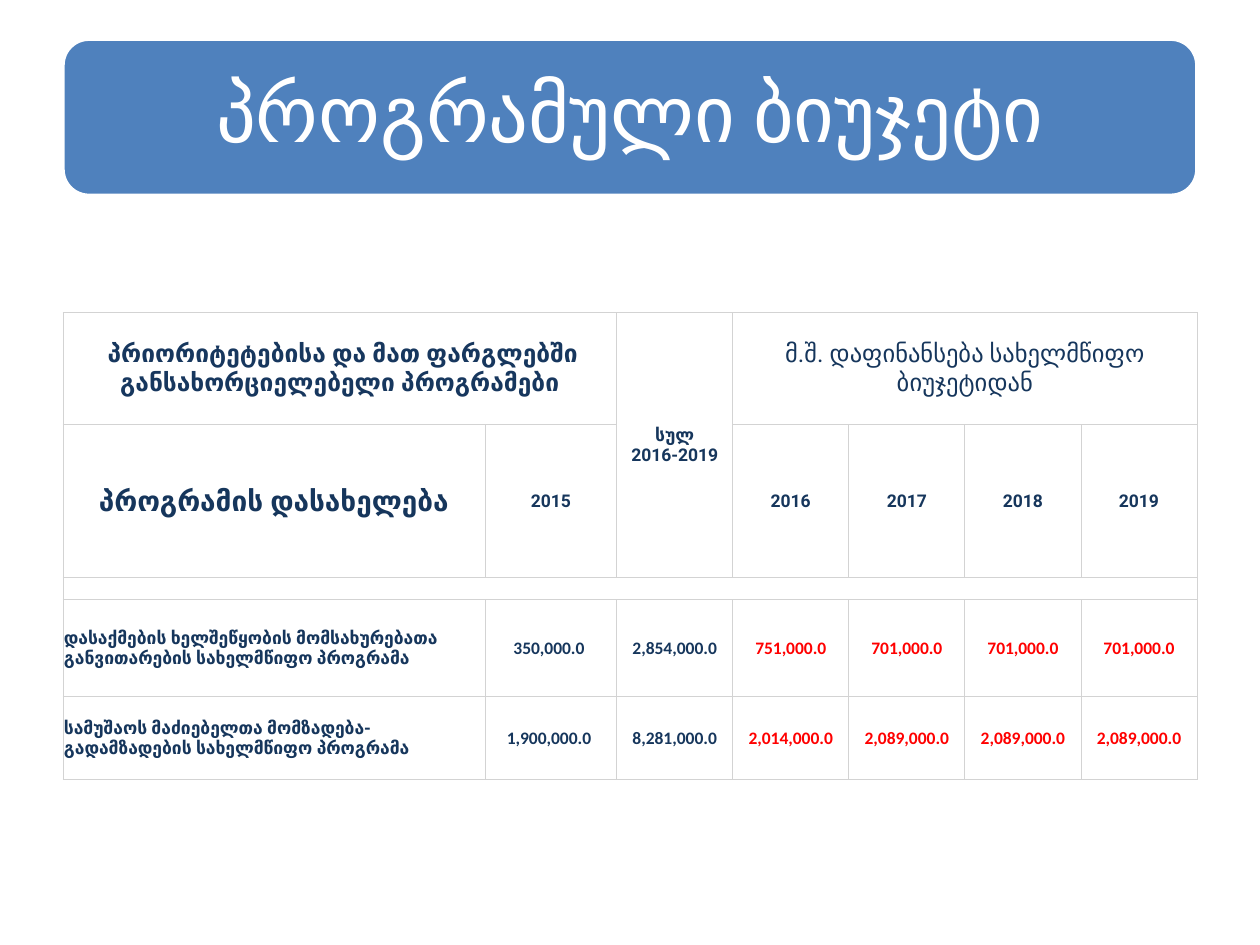
from lxml.etree import SubElement
from pptx import Presentation
from pptx.dml.color import RGBColor
from pptx.enum.shapes import MSO_SHAPE as Preset
from pptx.enum.text import MSO_ANCHOR as Anchor, MSO_AUTO_SIZE as AutoSize, PP_ALIGN as Align
from pptx.oxml.ns import qn
from pptx.util import Cm, Pt

WHITE = RGBColor(0xFF, 0xFF, 0xFF)
BLUE = RGBColor(0x4F, 0x81, 0xBD)
NAVY = RGBColor(0x17, 0x37, 0x5E)
DARK = RGBColor(0x16, 0x36, 0x5C)
RED = RGBColor(0xFF, 0x00, 0x00)
GRID = RGBColor(0xD3, 0xD3, 0xD3)

LEFT, WIDTH = 1.27, 22.86
COLUMNS = [8.51, 2.65] + [2.34] * 5
ROWS = [2.26, 3.09, 0.44, 1.95, 1.68]

PROGRAMS = [
    ("დასაქმების ხელშეწყობის მომსახურებათა განვითარების სახელმწიფო პროგრამა",
     ["350,000.0 ", "2,854,000.0", "751,000.0", "701,000.0", "701,000.0", "701,000.0"]),
    ("სამუშაოს მაძიებელთა მომზადება-გადამზადების სახელმწიფო პროგრამა",
     ["1,900,000.0 ", "8,281,000.0", "2,014,000.0", "2,089,000.0", "2,089,000.0", "2,089,000.0"]),
]


class BudgetSlide:
    heading_font = "Roboto"
    figure_font = "Calibri"

    def __init__(self, deck):
        self.slide = deck.slides.add_slide(deck.slide_layouts[5])

    def style(self, paragraph, size, color, font, bold=False, align=Align.CENTER):
        paragraph.alignment = align
        paragraph.font.size = Pt(size)
        paragraph.font.name = font
        paragraph.font.bold = bold
        paragraph.font.color.rgb = color

    def banner(self, text, left, top, width, height):
        panel = self.slide.shapes.add_shape(
            Preset.ROUNDED_RECTANGLE, Cm(left), Cm(top), Cm(width), Cm(height))
        panel.shadow.inherit = False
        panel.fill.solid()
        panel.fill.fore_color.rgb = BLUE
        panel.line.color.rgb = WHITE
        panel.line.width = Pt(2)

        title = self.slide.shapes.title
        title._element.addprevious(panel._element)  # panel goes behind the title
        inset = 0.15
        title.left, title.top = Cm(left + inset), Cm(top + inset)
        title.width, title.height = Cm(width - 2 * inset), Cm(height - 2 * inset)
        frame = title.text_frame
        frame.text = text
        frame.auto_size = AutoSize.NONE
        frame.vertical_anchor = Anchor.MIDDLE
        frame.margin_left = frame.margin_right = Cm(0.48)
        frame.margin_top = frame.margin_bottom = Cm(0.48)
        frame.paragraphs[0].line_spacing = 0.9
        self.style(frame.paragraphs[0], 45, WHITE, self.figure_font)

    def grid(self, left, top, columns, rows):
        table = self.slide.shapes.add_table(
            len(rows), len(columns), Cm(left), Cm(top), Cm(sum(columns)), Cm(sum(rows))).table
        table.first_row = table.horz_banding = False
        for column, width in zip(table.columns, columns):
            column.width = Cm(width)
        for row, height in zip(table.rows, rows):
            row.height = Cm(height)
        for cell in table.iter_cells():
            self.border(cell)
            cell.fill.background()
            cell.vertical_anchor = Anchor.MIDDLE
            cell.margin_left = cell.margin_right = cell.margin_top = Cm(0.02)
            cell.margin_bottom = 0
            # Small empty paragraphs let the spacer row stay thin
            cell.text_frame.paragraphs[0]._p.get_or_add_endParaRPr().set("sz", "800")
        return table

    def border(self, cell):
        properties = cell._tc.get_or_add_tcPr()
        for side in ("a:lnL", "a:lnR", "a:lnT", "a:lnB"):
            line = SubElement(properties, qn(side), w=str(Pt(0.5)))
            fill = SubElement(line, qn("a:solidFill"))
            SubElement(fill, qn("a:srgbClr"), val=str(GRID))

    def entry(self, cell, text, size=10, color=DARK, font=heading_font, bold=True,
              align=Align.CENTER):
        cell.text = text
        for paragraph in cell.text_frame.paragraphs:
            self.style(paragraph, size, color, font, bold, align)


def main():
    deck = Presentation()
    deck.slide_width, deck.slide_height = Cm(25.4), Cm(19.05)
    page = BudgetSlide(deck)

    # Title banner
    page.banner("პროგრამული ბიუჯეტი", LEFT, 0.79, WIDTH, 3.15)

    # Table frame and merged areas
    budget = page.grid(LEFT, 6.3, COLUMNS, ROWS)
    for first, last in [((0, 0), (0, 1)), ((0, 2), (1, 2)), ((0, 3), (0, 6)), ((2, 0), (2, 6))]:
        budget.cell(*first).merge(budget.cell(*last))

    # Headings
    page.entry(budget.cell(0, 0), " პრიორიტეტებისა და მათ ფარგლებში განსახორციელებელი პროგრამები",
               size=14, color=NAVY)
    page.entry(budget.cell(0, 2), "სულ\n2016-2019")
    page.entry(budget.cell(0, 3), "მ.შ. დაფინანსება სახელმწიფო ბიუჯეტიდან", size=14, bold=False)
    page.entry(budget.cell(1, 0), "პროგრამის დასახელება", size=16)
    for column, year in [(1, 2015), (3, 2016), (4, 2017), (5, 2018), (6, 2019)]:
        page.entry(budget.cell(1, column), str(year))

    # Programs: yearly state funding is red
    for row, (program, amounts) in enumerate(PROGRAMS, start=3):
        page.entry(budget.cell(row, 0), program, align=Align.LEFT)
        for column, amount in enumerate(amounts, start=1):
            page.entry(budget.cell(row, column), amount, font=page.figure_font,
                       color=RED if column > 2 else DARK)

    deck.save("out.pptx")


if __name__ == "__main__":
    main()
